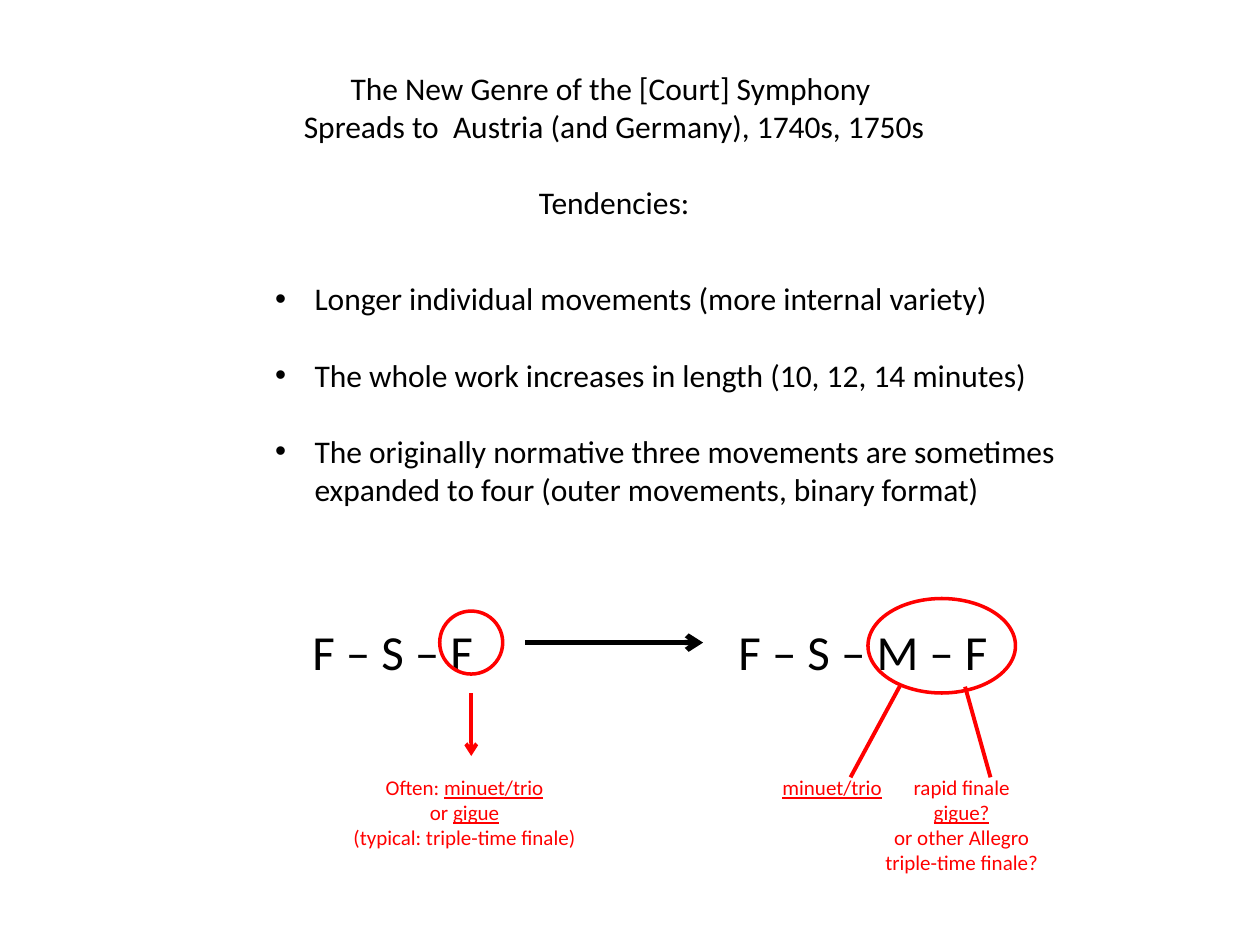
from dataclasses import dataclass

import pptx
import pptx.dml.color
import pptx.enum.shapes
import pptx.enum.text
import pptx.oxml
import pptx.oxml.ns
import pptx.util

Pt = pptx.util.Pt
Align = pptx.enum.text.PP_ALIGN
BLACK = pptx.dml.color.RGBColor(0x00, 0x00, 0x00)
RED = pptx.dml.color.RGBColor(0xFF, 0x00, 0x00)
FONT = "Calibri"
LINE_GAP = 22


@dataclass
class Label:
    left: float
    top: float
    width: float
    lines: list[list[tuple[str, bool]]]
    size: float = 12
    color: pptx.dml.color.RGBColor = RED
    align: Align = Align.CENTER


@dataclass
class Ring:
    left: float
    top: float
    width: float
    height: float


@dataclass
class Stroke:
    start: tuple[float, float]
    end: tuple[float, float]
    color: pptx.dml.color.RGBColor = RED
    weight: float = 2.25
    arrow: bool = False


TITLE = [
    "The New Genre of the [Court] Symphony ",
    "Spreads to  Austria (and Germany), 1740s, 1750s",
    "Tendencies:",
]
TENDENCIES = [
    "Longer individual movements (more internal variety)",
    "The whole work increases in length (10, 12, 14 minutes)",
    "The originally normative three movements are sometimes "
    "expanded to four (outer movements, binary format)",
]
LABELS = [
    Label(178.5, 355, 120, [[("F – S – F", False)]], 28, BLACK, Align.LEFT),
    Label(422, 355, 170, [[("F – S – M – F", False)]], 28, BLACK, Align.LEFT),
    Label(190.5, 442.5, 150, [
        [("Often: ", False), ("minuet/trio", True)],
        [("or ", False), ("gigue", True)],
        [("(typical: triple-time finale)", False)],
    ]),
    Label(440.5, 442.5, 70, [[("minuet/trio", True)]]),
    Label(494.5, 442.5, 110, [
        [("rapid finale", False)],
        [("gigue?", True)],
        [("or other Allegro", False)],
        [("triple-time finale?", False)],
    ]),
]
RINGS = [Ring(251.3, 349.2, 36, 36), Ring(496, 342, 84.3, 54)]
STROKES = [
    Stroke((269.3, 396), (269.3, 432), arrow=True),
    Stroke((300.2, 367.2), (401.8, 367.2), BLACK, 3, True),
    Stroke((514.8, 391), (486, 444.2)),
    Stroke((551.5, 392.4), (566, 444.2)),
]


def style(paragraph, size: float, color: pptx.dml.color.RGBColor, align: Align) -> None:
    paragraph.font.name = FONT
    paragraph.font.size = Pt(size)
    paragraph.font.color.rgb = color
    paragraph.alignment = align
    paragraph.space_before = Pt(0)


def place(shape, left: float, top: float, width: float, height: float) -> None:
    shape.left, shape.top = Pt(left), Pt(top)
    shape.width, shape.height = Pt(width), Pt(height)


def fill_placeholder(shape, lines: list[str], align: Align) -> list:
    frame = shape.text_frame
    frame.text = "\n".join(lines)
    frame.word_wrap = True
    frame.auto_size = pptx.enum.text.MSO_AUTO_SIZE.NONE
    frame.vertical_anchor = pptx.enum.text.MSO_ANCHOR.TOP
    for paragraph in frame.paragraphs:
        style(paragraph, 18, BLACK, align)
    return list(frame.paragraphs)


def draw_label(page, label: Label) -> None:
    height = len(label.lines) * label.size * 1.22
    box = page.shapes.add_textbox(Pt(label.left), Pt(label.top), Pt(label.width), Pt(height))
    frame = box.text_frame
    frame.word_wrap = True
    frame.margin_left = frame.margin_right = frame.margin_top = frame.margin_bottom = 0
    for index, line in enumerate(label.lines):
        para = frame.add_paragraph() if index else frame.paragraphs[0]
        style(para, label.size, label.color, label.align)
        for text, underlined in line:
            span = para.add_run()
            span.text = text
            if underlined:
                span.font.underline = True


def draw_ring(page, ring: Ring) -> None:
    shape = page.shapes.add_shape(
        pptx.enum.shapes.MSO_SHAPE.OVAL,
        Pt(ring.left), Pt(ring.top), Pt(ring.width), Pt(ring.height),
    )
    shape.shadow.inherit = False
    shape.fill.background()
    shape.line.color.rgb = RED
    shape.line.width = Pt(2)


def draw_stroke(page, stroke: Stroke) -> None:
    connector = page.shapes.add_connector(
        pptx.enum.shapes.MSO_CONNECTOR.STRAIGHT,
        *map(Pt, stroke.start + stroke.end),
    )
    connector.line.color.rgb = stroke.color
    connector.line.width = Pt(stroke.weight)
    if stroke.arrow:
        head = pptx.oxml.parse_xml(
            f'<a:tailEnd {pptx.oxml.ns.nsdecls("a")} type="arrow"/>'
        )
        connector.line._get_or_add_ln().append(head)
    effects = pptx.oxml.parse_xml(f'<a:effectLst {pptx.oxml.ns.nsdecls("a")}/>')
    connector._element.spPr.append(effects)


def main() -> None:
    deck = pptx.Presentation()
    deck.slide_width, deck.slide_height = Pt(720), Pt(540)
    page = deck.slides.add_slide(deck.slide_layouts[1])

    title = page.shapes.title
    place(title, 156, 36, 390, 95)
    heading = fill_placeholder(title, TITLE, Align.CENTER)
    heading[-1].space_before = Pt(LINE_GAP)

    body = page.placeholders[1]
    place(body, 150, 156, 474.5, 140)
    for para in fill_placeholder(body, TENDENCIES, Align.LEFT):
        para.space_after = Pt(LINE_GAP)
        properties = para._p.get_or_add_pPr()
        properties.set("marL", str(Pt(22.5)))
        properties.set("indent", str(-Pt(22.5)))

    for label in LABELS:
        draw_label(page, label)
    for ring in RINGS:
        draw_ring(page, ring)
    for stroke in STROKES:
        draw_stroke(page, stroke)

    deck.save("out.pptx")


if __name__ == "__main__":
    main()
